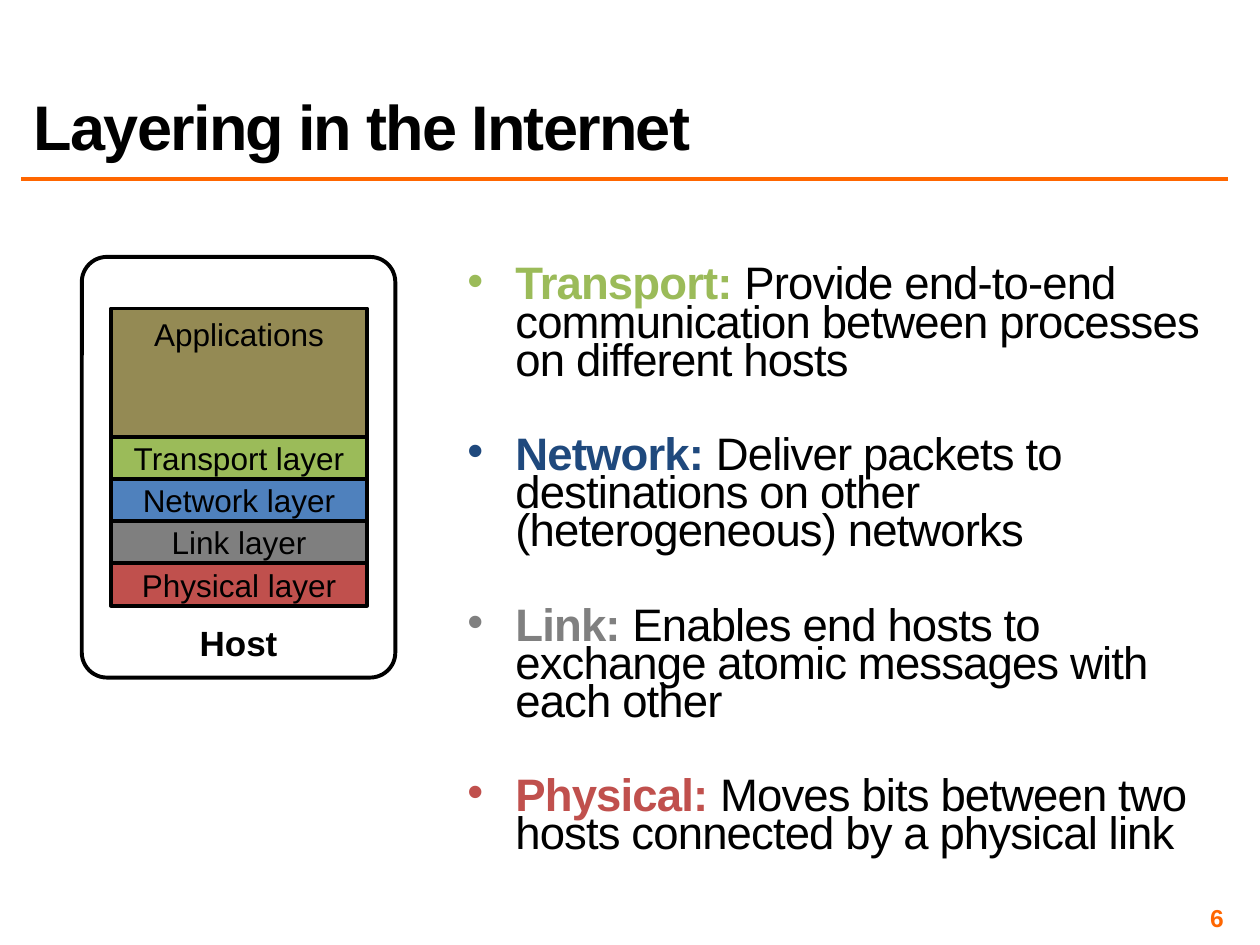
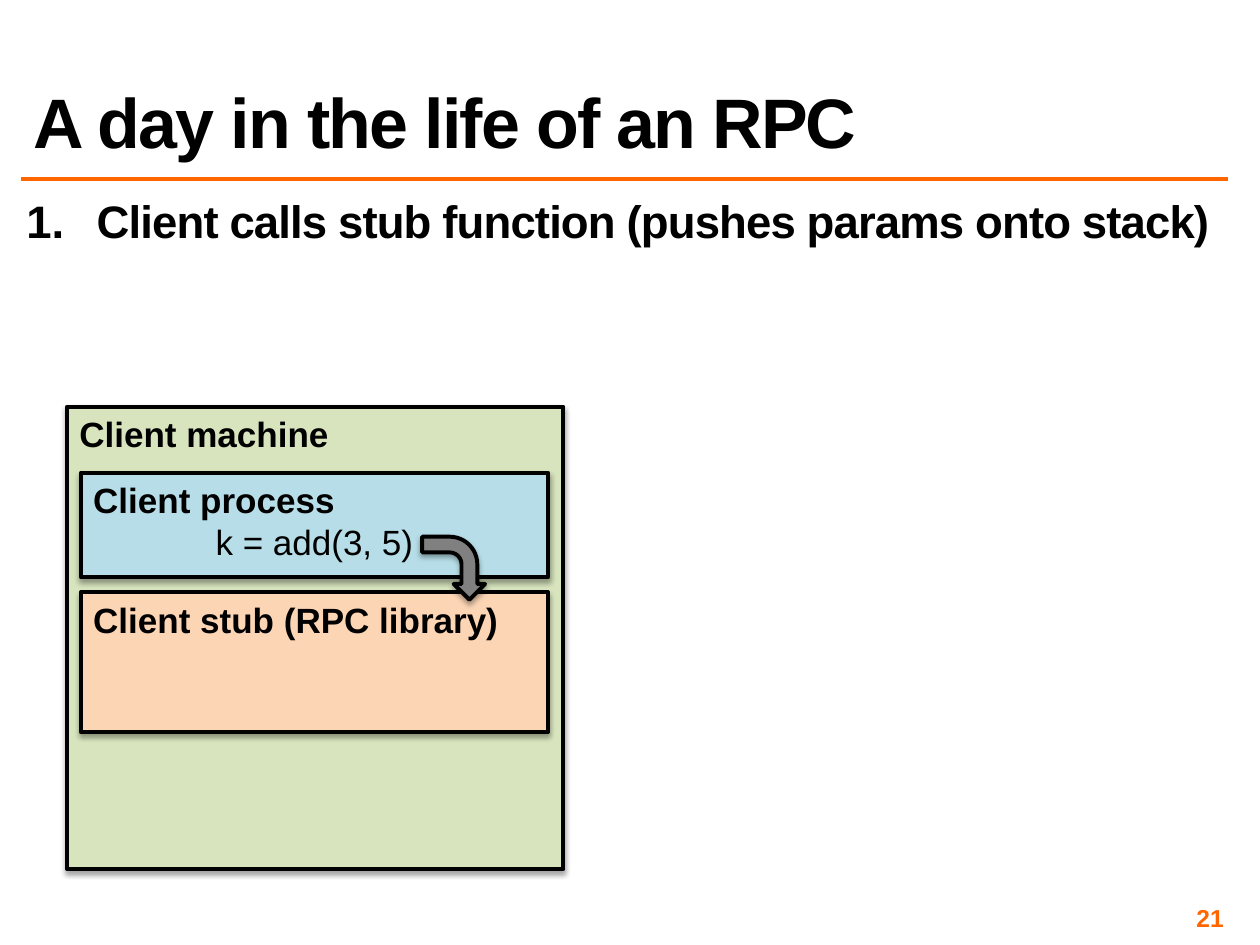
from dataclasses import dataclass

from lxml.etree import SubElement
from pptx import Presentation
from pptx.dml.color import RGBColor
from pptx.enum.shapes import MSO_CONNECTOR as Connector, MSO_SHAPE as Shape
from pptx.enum.text import MSO_ANCHOR as Anchor, MSO_AUTO_SIZE as AutoSize, PP_ALIGN as Align
from pptx.oxml.ns import qn
from pptx.util import Cm, Pt


@dataclass(frozen=True)
class Theme:
    font: str = "Arial"
    black: str = "000000"
    orange: str = "FF6600"
    applications: str = "948A54"
    transport: str = "9BBB59"
    network: str = "4F81BD"
    network_text: str = "1F497D"
    link: str = "7F7F7F"
    grey: str = "808080"
    physical: str = "C0504D"
    machine: str = "D7E4BD"
    process: str = "B7DEE8"
    stub: str = "FCD5B5"
    title_size: int = 36
    large_title_size: int = 40
    body_size: int = 26
    box_size: int = 20
    layer_size: int = 18
    number_size: int = 14
    outline: float = 2.25
    rule: float = 2


THEME = Theme()
LEFT, CONTENT_WIDTH = 0.43, 24.33
BODY_TOP = 4.01
THIN_INSET = 0.1


class Deck:
    def __init__(self, theme):
        self.theme = theme
        self.presentation = Presentation()
        self.presentation.slide_width = Cm(25.4)
        self.presentation.slide_height = Cm(19.05)
        self.slide = None

    def new_slide(self, title, number, title_size):
        """Start a slide with its title, rule and page number."""
        layout = self.presentation.slide_layouts[1]
        self.slide = self.presentation.slides.add_slide(layout)
        self.rule()
        self.title(title, title_size)
        self.page_number(number)

    def place(self, shape, left, top, width, height):
        shape.left, shape.top = Cm(left), Cm(top)
        shape.width, shape.height = Cm(width), Cm(height)

    def style(self, paragraph, size, color=None, bold=None, spacing=None):
        """Format a paragraph; spacing is in hundredths of a point."""
        font = paragraph.font
        font.name, font.size, font.bold = self.theme.font, Pt(size), bold
        if color:
            font.color.rgb = RGBColor.from_string(color)
        if spacing:
            font._rPr.set("spc", str(spacing))

    def thin_insets(self, frame):
        frame.margin_left = frame.margin_right = Cm(THIN_INSET)
        frame.margin_top = frame.margin_bottom = Cm(THIN_INSET)

    def rule(self):
        line = self.slide.shapes.add_connector(
            Connector.STRAIGHT, Cm(LEFT), Cm(3.61), Cm(LEFT + CONTENT_WIDTH), Cm(3.61))
        line.line.color.rgb = RGBColor.from_string(self.theme.orange)
        line.line.width = Pt(self.theme.rule)
        SubElement(line._element.spPr, qn("a:effectLst"))

    def title(self, text, size):
        title = self.slide.shapes.title
        self.place(title, LEFT, 0.43, CONTENT_WIDTH, 2.97)
        frame = title.text_frame
        frame.text = text
        frame.auto_size = AutoSize.NONE
        frame.vertical_anchor = Anchor.BOTTOM
        paragraph = frame.paragraphs[0]
        paragraph.alignment, paragraph.line_spacing = Align.LEFT, 0.8
        self.style(paragraph, size, self.theme.black, True, -100)

    def page_number(self, number):
        box = self.slide.shapes.add_textbox(Cm(18.85), Cm(18.21), Cm(5.92), Cm(0.58))
        frame = box.text_frame
        frame.word_wrap = True
        frame.vertical_anchor = Anchor.MIDDLE
        self.thin_insets(frame)
        paragraph = frame.paragraphs[0]
        paragraph.text = str(number)
        paragraph.alignment = Align.RIGHT
        self.style(paragraph, self.theme.number_size, self.theme.orange, True)

    def body(self, left, width, height):
        """Move the body placeholder and return its text frame."""
        body = self.slide.placeholders[1]
        self.place(body, left, BODY_TOP, width, height)
        frame = body.text_frame
        frame.auto_size = AutoSize.NONE
        self.thin_insets(frame)
        return frame

    def list_item(self, paragraph, runs, indent, line_spacing, marker, **marker_options):
        """Fill a list paragraph with (text, colour, bold) runs."""
        properties = paragraph._p.get_or_add_pPr()
        properties.set("marL", str(Cm(indent)))
        properties.set("indent", str(-Cm(indent)))
        SubElement(properties, qn(marker), **marker_options)
        paragraph.line_spacing = line_spacing
        self.style(paragraph, self.theme.body_size, spacing=-50)
        for text, color, bold in runs:
            run = paragraph.add_run()
            run.text = text
            run.font.bold = bold
            run.font.color.rgb = RGBColor.from_string(color)
            run.font._element.set("spc", "-50") if hasattr(run.font, "_element") else None

    def definitions(self, entries, left, width, height):
        frame = self.body(left, width, height)
        frame.margin_top = Cm(1.42)
        for index, (term, color, meaning) in enumerate(entries):
            paragraph = frame.add_paragraph() if index else frame.paragraphs[0]
            runs = [(term, color, True), (meaning, self.theme.black, False)]
            self.list_item(paragraph, runs, 0.97, 0.7, "a:buChar", char="•")
            paragraph.space_before = Pt(32 if index else 0)

    def numbered_step(self, text):
        frame = self.body(LEFT, CONTENT_WIDTH, 3.56)
        self.list_item(frame.paragraphs[0], [(text, self.theme.black, True)],
                       1.42, 0.8, "a:buAutoNum", type="arabicPeriod")

    def shape(self, kind, left, top, width, height, fill=None, shadow=False):
        shape = self.slide.shapes.add_shape(kind, Cm(left), Cm(top), Cm(width), Cm(height))
        if fill:
            shape.fill.solid()
            shape.fill.fore_color.rgb = RGBColor.from_string(fill)
        else:
            shape.fill.background()
        shape.line.color.rgb = RGBColor.from_string(self.theme.black)
        shape.line.width = Pt(self.theme.outline)
        shape.shadow.inherit = False
        if shadow:
            self.drop_shadow(shape)
        return shape

    def drop_shadow(self, shape):
        effects = shape._element.spPr.find(qn("a:effectLst"))
        outer = SubElement(effects, qn("a:outerShdw"), blurRad=str(Pt(3.1)),
                           dist=str(Pt(1.8)), dir="5400000", rotWithShape="0")
        color = SubElement(outer, qn("a:srgbClr"), val=self.theme.black)
        SubElement(color, qn("a:alpha"), val="35000")

    def label(self, shape, lines, size, anchor, wrap=True):
        """Write (text, alignment, bold) lines into a shape."""
        frame = shape.text_frame
        frame.word_wrap = wrap
        frame.vertical_anchor = anchor
        for index, (text, alignment, bold) in enumerate(lines):
            paragraph = frame.add_paragraph() if index else frame.paragraphs[0]
            paragraph.text = text
            paragraph.alignment = alignment
            self.style(paragraph, size, self.theme.black, bold)


def build_layering(deck):
    theme = deck.theme
    deck.new_slide("Layering in the Internet", 6, theme.title_size)
    deck.definitions([
        ("Transport:", theme.transport,
         " Provide end-to-end communication between processes on different hosts"),
        ("Network:", theme.network_text,
         " Deliver packets to destinations on other (heterogeneous) networks"),
        ("Link: ", theme.grey,
         "Enables end hosts to exchange atomic messages with each other"),
        ("Physical:", theme.physical,
         " Moves bits between two hosts connected by a physical link"),
    ], 9.32, 15.44, 13.51)

    layers = [
        ("Applications", theme.applications, 2.59, Anchor.TOP),
        ("Transport layer", theme.transport, 0.85, Anchor.MIDDLE),
        ("Network layer", theme.network, 0.85, Anchor.MIDDLE),
        ("Link layer", theme.link, 0.85, Anchor.MIDDLE),
        ("Physical layer", theme.physical, 0.85, Anchor.MIDDLE),
    ]
    top = 6.22
    for name, fill, height, anchor in layers:
        layer = deck.shape(Shape.RECTANGLE, 2.24, top, 5.16, height, fill)
        deck.label(layer, [(name, Align.CENTER, False)], theme.layer_size, anchor, wrap=False)
        top += height

    host = deck.shape(Shape.ROUNDED_RECTANGLE, 1.65, 5.18, 6.32, 8.48)
    host.adjustments[0] = 0.08
    deck.label(host, [("Host", Align.CENTER, True)], theme.box_size, Anchor.BOTTOM)


def build_rpc(deck):
    theme = deck.theme
    deck.new_slide("A day in the life of an RPC", 21, theme.large_title_size)
    deck.numbered_step("Client calls stub function (pushes params onto stack)")
    boxes = [
        ((1.35, 8.2, 10.01, 9.32), theme.machine, [("Client machine", Align.LEFT, True)]),
        ((1.63, 9.53, 9.42, 2.11), theme.process,
         [("Client process", Align.LEFT, True), ("k = add(3, 5)", Align.CENTER, False)]),
        ((1.63, 11.94, 9.42, 2.82), theme.stub,
         [("Client stub (RPC library)", Align.LEFT, True)]),
    ]
    for bounds, fill, lines in boxes:
        box = deck.shape(Shape.RECTANGLE, *bounds, fill, shadow=True)
        deck.label(box, lines, theme.box_size, Anchor.TOP)
    call_arrow = deck.shape(Shape.BENT_ARROW, 8.51, 10.82, 1.27, 1.27, theme.grey, shadow=True)
    call_arrow.rotation = 90


def main():
    deck = Deck(THEME)
    build_layering(deck)
    build_rpc(deck)
    deck.presentation.save("out.pptx")


if __name__ == "__main__":
    main()
